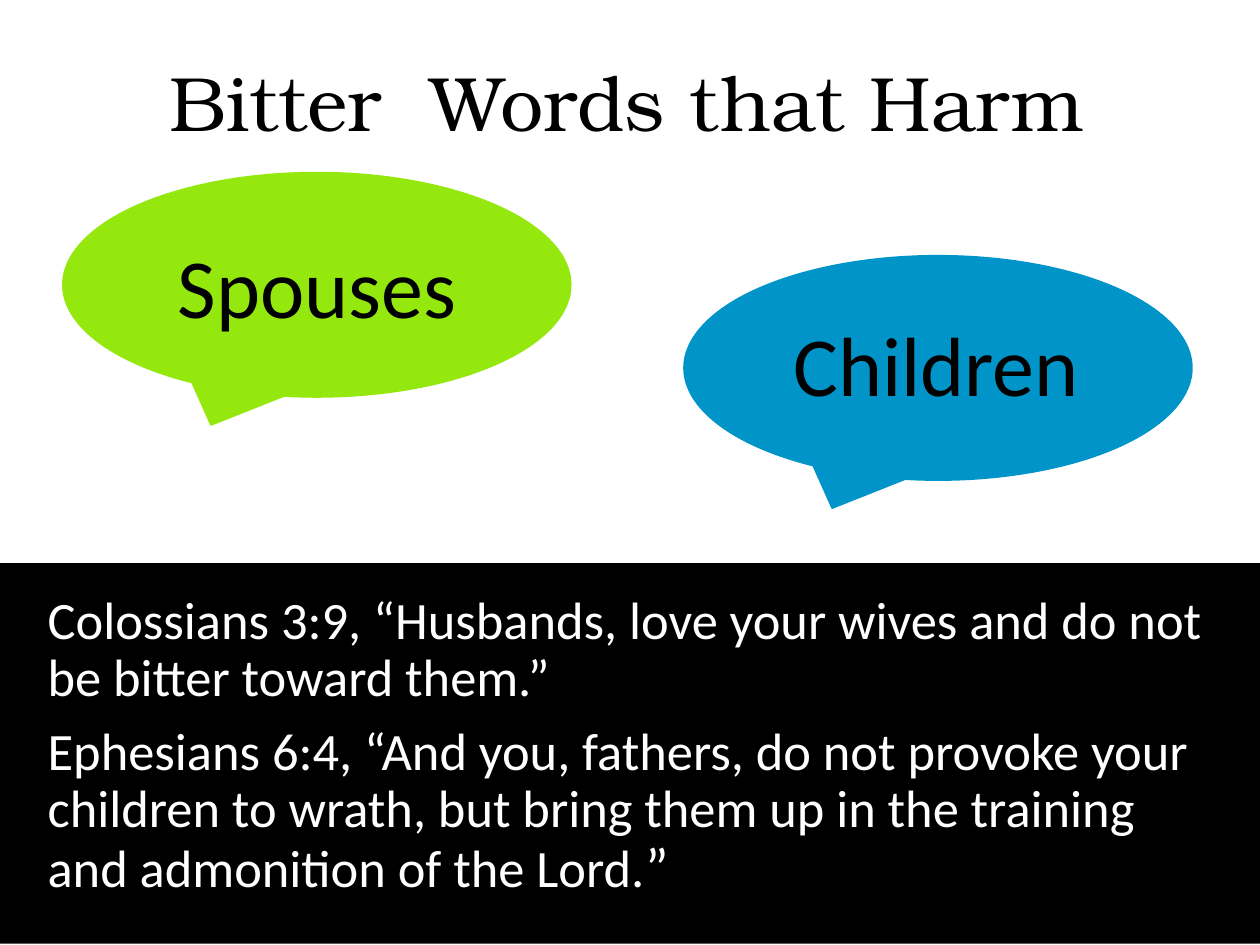
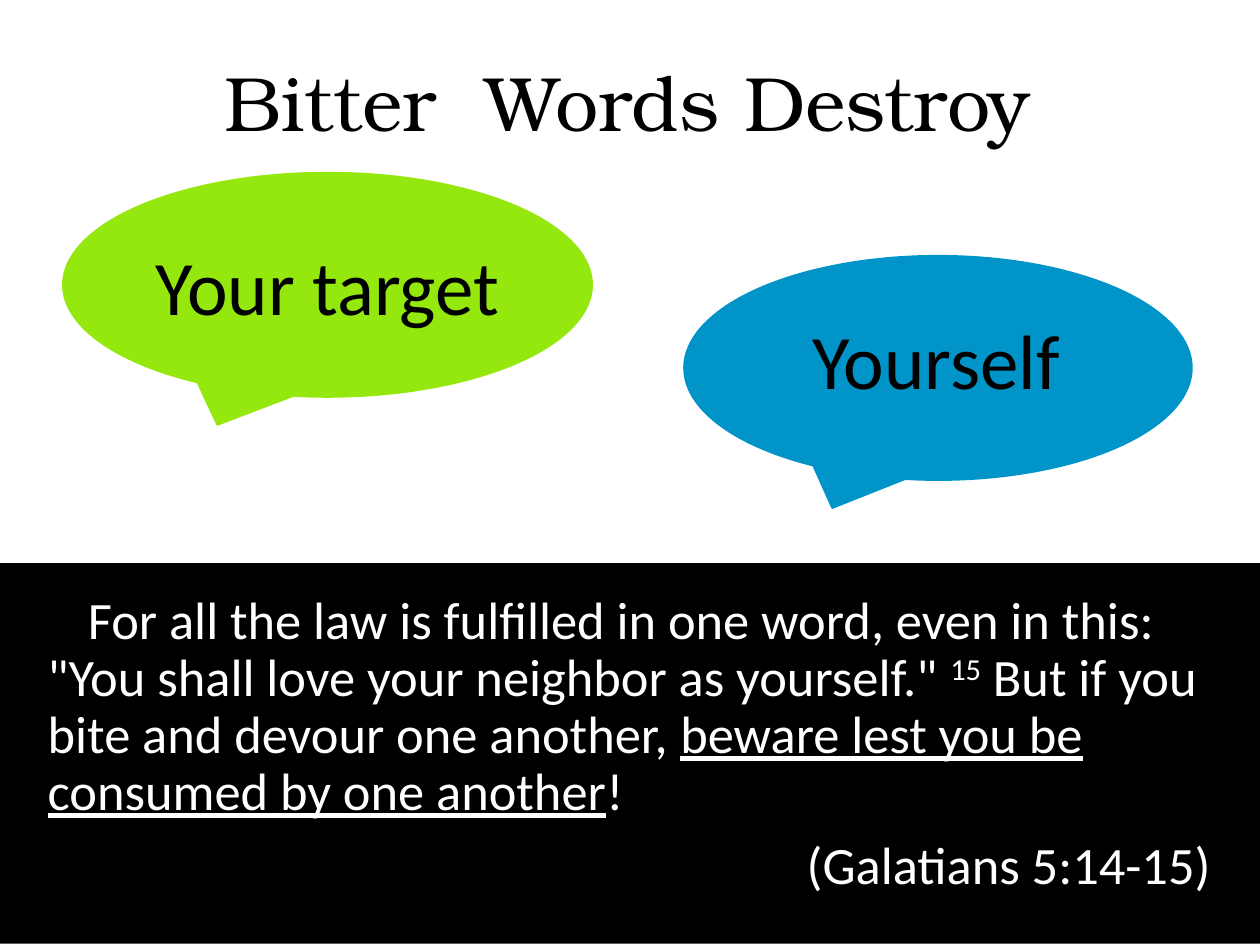
from dataclasses import dataclass

from pptx import Presentation
from pptx.dml.color import RGBColor
from pptx.enum.shapes import MSO_SHAPE as Preset
from pptx.enum.text import MSO_ANCHOR as Anchor
from pptx.enum.text import MSO_AUTO_SIZE as AutoSize
from pptx.enum.text import PP_ALIGN as Align
from pptx.util import Emu, Pt

EMU_PER_PX = 9144
BLACK, WHITE, GREEN, BLUE = "000000", "FFFFFF", "95E80E", "0094C8"
BODY_FONT, TITLE_FONT = "Calibri", "TeX Gyre Bonum"


@dataclass(frozen=True)
class Box:
    left: int
    top: int
    width: int
    height: int


@dataclass(frozen=True)
class Words:
    text: str
    size: int = 30
    color: str = WHITE
    font: str = BODY_FONT
    underline: bool = False
    superscript: bool = False


@dataclass(frozen=True)
class Passage:
    words: tuple[Words, ...]
    align: Align = Align.LEFT
    line_spacing: float = 1.0
    space_before: int = 0
    indent: int = 0


@dataclass(frozen=True)
class Lesson:
    title: str
    first_harmed: str
    second_harmed: str
    harmed_size: int
    first_width: int
    second_height: int
    verses: tuple[Passage, ...]


TITLE = Box(50, 47, 896, 90)
BLUE_BUBBLE = Box(543, 203, 403, 178)
BAND = Box(0, 447, 1000, 302)
SCRIPTURE = Box(28, 467, 943, 253)


def px(length: int) -> Emu:
    return Emu(length * EMU_PER_PX)


def place(box: Box) -> tuple[Emu, ...]:
    return px(box.left), px(box.top), px(box.width), px(box.height)


def rgb(color: str) -> RGBColor:
    return RGBColor.from_string(color)


def verse(*words: Words, align: Align = Align.LEFT, indent: int = 0) -> Passage:
    return Passage(words, align, 0.9, 10, indent)


def centred(text: str, size: int) -> Passage:
    return Passage((Words(text, size, BLACK),), Align.CENTER)


def write(frame, passages: tuple[Passage, ...]) -> None:
    frame.word_wrap = True
    for index, passage in enumerate(passages):
        paragraph = frame.add_paragraph() if index else frame.paragraphs[0]
        paragraph.alignment = passage.align
        paragraph.line_spacing = passage.line_spacing
        paragraph.space_before = Pt(passage.space_before)
        if passage.indent:
            paragraph._p.get_or_add_pPr().set("indent", str(px(passage.indent)))
        for words in passage.words:
            run = paragraph.add_run()
            run.text = words.text
            run.font.name = words.font
            run.font.size = Pt(words.size)
            run.font.color.rgb = rgb(words.color)
            if words.underline:
                run.font.underline = True
            if words.superscript:
                run._r.get_or_add_rPr().set("baseline", "30000")


def add_filled(slide, preset: Preset, box: Box, color: str, outlined: bool = True):
    shape = slide.shapes.add_shape(preset, *place(box))
    shape.shadow.inherit = False
    shape.fill.solid()
    shape.fill.fore_color.rgb = rgb(color)
    if outlined:
        shape.line.color.rgb = rgb(color)
        shape.line.width = Pt(1)
    else:
        shape.line.fill.background()
    return shape


def add_text(slide, box: Box, *passages: Passage):
    frame = slide.shapes.add_textbox(*place(box)).text_frame
    write(frame, passages)
    return frame


def add_lesson(deck, lesson: Lesson) -> None:
    slide = deck.slides.add_slide(deck.slide_layouts[6])
    slide.background.fill.solid()
    slide.background.fill.fore_color.rgb = rgb(WHITE)

    add_filled(slide, Preset.OVAL_CALLOUT, BLUE_BUBBLE, BLUE)
    green_bubble = add_filled(
        slide, Preset.OVAL_CALLOUT, Box(50, 137, lesson.first_width, 178), GREEN
    )
    green_bubble.text_frame.vertical_anchor = Anchor.MIDDLE
    write(green_bubble.text_frame, (centred(lesson.first_harmed, lesson.harmed_size),))
    add_filled(slide, Preset.RECTANGLE, BAND, BLACK, outlined=False)

    heading = Words(lesson.title, 44, BLACK, TITLE_FONT)
    add_text(slide, TITLE, Passage((heading,), Align.CENTER, 0.9))
    add_text(slide, SCRIPTURE, *lesson.verses)
    second_harmed = add_text(
        slide,
        Box(578, 243, 330, lesson.second_height),
        centred(lesson.second_harmed, lesson.harmed_size),
    )
    second_harmed.auto_size = AutoSize.SHAPE_TO_FIT_TEXT


LESSONS = (
    Lesson(
        "Bitter  Words that Harm", "Spouses", "Children", 48, 403, 91,
        (
            verse(Words(
                "Colossians 3:9, “Husbands, love your wives and do not "
                "be bitter toward them.”"
            )),
            verse(
                Words(
                    "Ephesians 6:4, “And you, fathers, do not provoke your "
                    "children to wrath, but bring them up in the training "
                    "and admonition of the Lord."
                ),
                Words("”", 32),
            ),
        ),
    ),
    Lesson(
        "Bitter  Words Destroy", "Your target", "Yourself", 44, 420, 84,
        (
            verse(
                Words(
                    "For all the law is fulfilled in one word, even in this: "
                    '"You shall love your neighbor as yourself." '
                ),
                Words("15", superscript=True),
                Words(" But if you bite and devour one another, "),
                Words("beware lest you be consumed by one another", underline=True),
                Words("!"),
                indent=32,
            ),
            verse(Words("(Galatians 5:14-15)"), align=Align.RIGHT),
        ),
    ),
)


def main() -> None:
    deck = Presentation()
    deck.slide_width, deck.slide_height = px(1000), px(750)
    for lesson in LESSONS:
        add_lesson(deck, lesson)
    deck.save("out.pptx")


if __name__ == "__main__":
    main()
